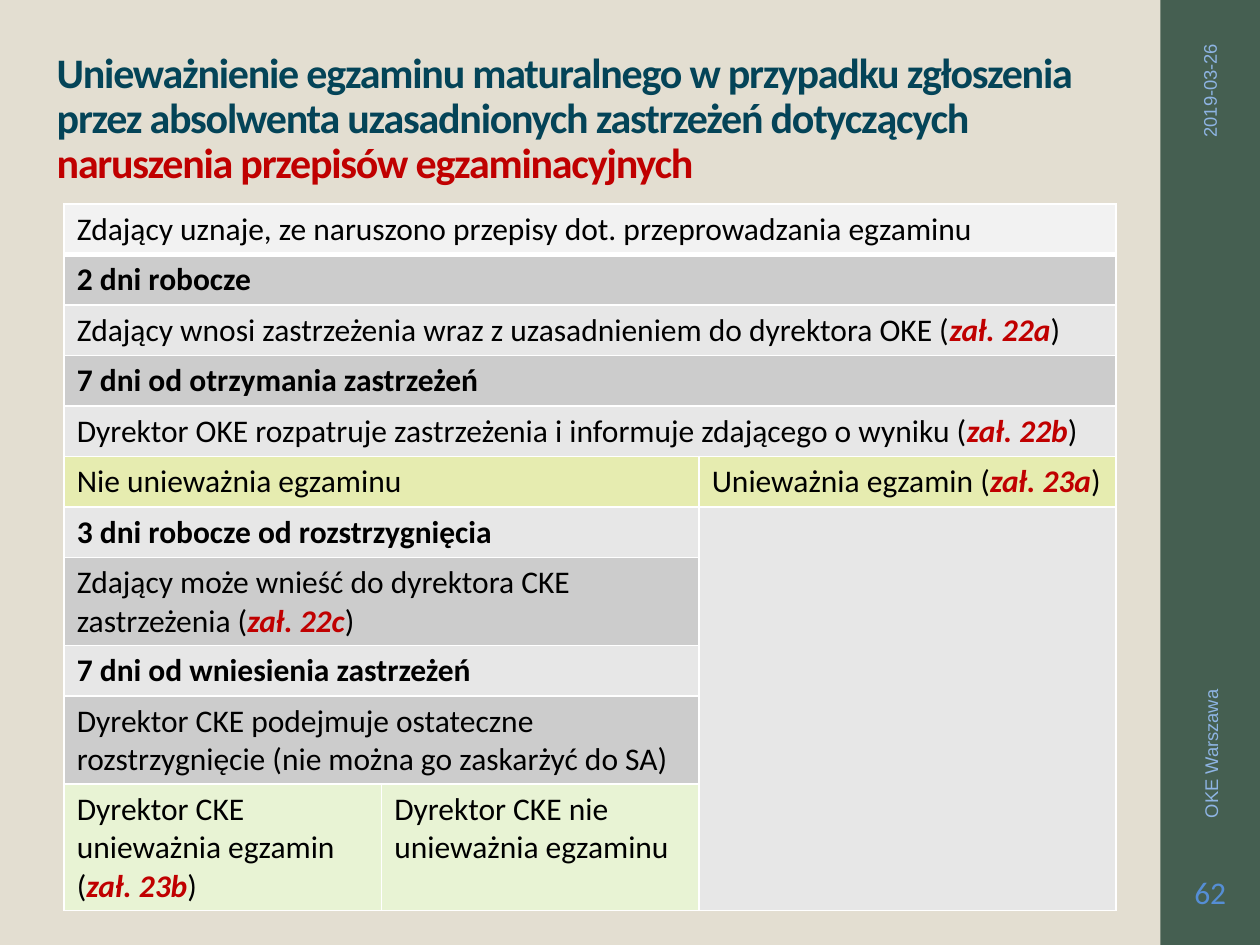
from lxml.etree import SubElement
from pptx import Presentation
from pptx.dml.color import RGBColor
from pptx.enum.shapes import MSO_SHAPE
from pptx.enum.text import MSO_ANCHOR, PP_ALIGN
from pptx.oxml.ns import qn
from pptx.util import Inches, Pt

THEME = {
    "background": "E3DED1", "band": "455F51", "title": "044458",
    "accent": "C00000", "text": "000000", "border": "FFFFFF",
    "margin_text": "8EB4E3", "number": "558ED5",
    "opening": "F2F2F2", "dark": "CCCCCC", "light": "E7E7E7",
    "decision": "E6ECB0", "outcome": "E8F3D4",
    "font": "Calibri", "margin_font": "Arial",
    "title_size": 24, "body_size": 18, "margin_size": 10.5,
}

TITLE = [
    ("Unieważnienie egzaminu maturalnego w przypadku zgłoszenia przez absolwenta "
     "uzasadnionych zastrzeżeń dotyczących ", "title"),
    ("naruszenia przepisów egzaminacyjnych", "accent"),
]

# Each row: fill, bold, number of text lines, then (text, attachment, columns spanned).
ROWS = [
    ("opening", False, 1, [("Zdający uznaje, ze naruszono przepisy dot. przeprowadzania egzaminu", "", 3)]),
    ("dark", True, 1, [("2 dni robocze", "", 3)]),
    ("light", False, 1, [("Zdający wnosi zastrzeżenia wraz z uzasadnieniem do dyrektora OKE", "zał. 22a", 3)]),
    ("dark", True, 1, [("7 dni od otrzymania zastrzeżeń", "", 3)]),
    ("light", False, 1, [("Dyrektor OKE rozpatruje zastrzeżenia i informuje zdającego o wyniku", "zał. 22b", 3)]),
    ("decision", False, 1, [("Nie unieważnia egzaminu", "", 2), ("Unieważnia egzamin", "zał. 23a", 1)]),
    ("light", True, 1, [("3 dni robocze od rozstrzygnięcia", "", 2)]),
    ("dark", False, 2, [("Zdający może wnieść do dyrektora CKE zastrzeżenia", "zał. 22c", 2)]),
    ("light", True, 1, [("7 dni od wniesienia zastrzeżeń", "", 2)]),
    ("dark", False, 2, [("Dyrektor CKE podejmuje ostateczne rozstrzygnięcie (nie można go zaskarżyć do SA)", "", 2)]),
    ("outcome", False, 3, [("Dyrektor CKE unieważnia egzamin", "zał. 23b", 1),
                           ("Dyrektor CKE nie unieważnia egzaminu", "", 1)]),
]
CLOSED_BRANCH = (6, 2)  # top row and column of the empty area below "Unieważnia egzamin"
COLUMN_WIDTHS = [2.52, 2.52, 3.31]
LINE_HEIGHT = 0.3
CELL_PADDING = 0.1

# Text, box, rotation, alignment, side inset, font format.
MARGIN_FORMAT = {"name": THEME["margin_font"], "size": THEME["margin_size"], "color": "margin_text"}
MARGIN_TEXTS = [
    ("2019-03-26", (8.56, 1.14, 2.08, 0.3), 270, PP_ALIGN.RIGHT, 0.1, MARGIN_FORMAT),
    ("OKE Warszawa", (7.65, 4.48, 3.92, 0.3), 270, PP_ALIGN.LEFT, 0.1, MARGIN_FORMAT),
    ("62", (9.23, 6.75, 0.75, 0.65), 0, PP_ALIGN.CENTER, 0.03, {"color": "number"}),
]


def color(key):
    return RGBColor.from_string(THEME[key])


def add_run(paragraph, text, **formats):
    values = {"name": THEME["font"], "size": THEME["body_size"], "color": "text",
              "bold": False, "italic": False, **formats}
    run = paragraph.add_run()
    run.text = text
    run.font.color.rgb = color(values.pop("color"))
    values["size"] = Pt(values["size"])
    for name, value in values.items():
        setattr(run.font, name, value)
    return run


def add_title(slide):
    title = slide.shapes.title
    box = {"left": 0.35, "top": 0.44, "width": 8.63, "height": 1.1}
    for name, value in box.items():
        setattr(title, name, Inches(value))
    title.text_frame.vertical_anchor = MSO_ANCHOR.BOTTOM
    title.text_frame.word_wrap = True
    paragraph = title.text_frame.paragraphs[0]
    paragraph.alignment = PP_ALIGN.LEFT
    paragraph.line_spacing = 0.9
    for text, key in TITLE:
        run = add_run(paragraph, text, size=THEME["title_size"], color=key, bold=True)
        run.font._element.set("spc", "-70")


def add_margin(slide):
    """Side band with the date, the organisation and the slide number."""
    band = slide.shapes.add_shape(MSO_SHAPE.RECTANGLE, Inches(9.21), 0, Inches(0.79), Inches(7.5))
    band.shadow.inherit = False
    band.fill.solid()
    band.fill.fore_color.rgb = color("band")
    band.line.fill.background()
    for text, box, rotation, alignment, inset, formats in MARGIN_TEXTS:
        label = slide.shapes.add_textbox(*map(Inches, box))
        label.rotation = rotation
        frame = label.text_frame
        frame.word_wrap = True
        frame.vertical_anchor = MSO_ANCHOR.MIDDLE
        frame.margin_left = frame.margin_right = Inches(inset)
        frame.paragraphs[0].alignment = alignment
        add_run(frame.paragraphs[0], text, **formats)


def style_cell(cell, fill, top=1, bottom=1):
    """Borders (widths in points) must precede the fill in the cell properties."""
    properties = cell._tc.get_or_add_tcPr()
    for side, width in (("L", 1), ("R", 1), ("T", top), ("B", bottom)):
        line = SubElement(properties, qn(f"a:ln{side}"), w=str(Pt(width)))
        solid = SubElement(line, qn("a:solidFill"))
        SubElement(solid, qn("a:srgbClr"), val=THEME["border"])
    cell.fill.solid()
    cell.fill.fore_color.rgb = color(fill)


def write_cell(cell, text, attachment, bold):
    paragraph = cell.text_frame.paragraphs[0]
    add_run(paragraph, f"{text} (" if attachment else text, bold=bold)
    if attachment:
        add_run(paragraph, attachment, color="accent", bold=True, italic=True)
        add_run(paragraph, ")")


def add_procedure(slide):
    heights = [CELL_PADDING + LINE_HEIGHT * row[2] for row in ROWS]
    table = slide.shapes.add_table(
        len(ROWS), len(COLUMN_WIDTHS), Inches(0.51), Inches(1.62),
        Inches(sum(COLUMN_WIDTHS)), Inches(sum(heights))).table
    table.first_row = table.horz_banding = False
    for column, width in zip(table.columns, COLUMN_WIDTHS):
        column.width = Inches(width)

    branch_row, branch_column = CLOSED_BRANCH
    for index, (fill, bold, _, entries) in enumerate(ROWS):
        table.rows[index].height = Inches(heights[index])
        for column in range(len(COLUMN_WIDTHS)):
            closed = index >= branch_row and column >= branch_column
            style_cell(table.cell(index, column), "light" if closed else fill,
                       top=3 if index == 1 else 1, bottom=3 if index == 0 else 1)
        column = 0
        for text, attachment, span in entries:
            cell = table.cell(index, column)
            if span > 1:
                cell.merge(table.cell(index, column + span - 1))
            write_cell(cell, text, attachment, bold)
            column += span
    table.cell(branch_row, branch_column).merge(table.cell(len(ROWS) - 1, branch_column))


def main():
    presentation = Presentation()
    presentation.slide_width, presentation.slide_height = Inches(10), Inches(7.5)
    slide = presentation.slides.add_slide(presentation.slide_layouts[5])
    slide.background.fill.solid()
    slide.background.fill.fore_color.rgb = color("background")
    add_margin(slide)
    add_title(slide)
    add_procedure(slide)
    presentation.save("out.pptx")


if __name__ == "__main__":
    main()
